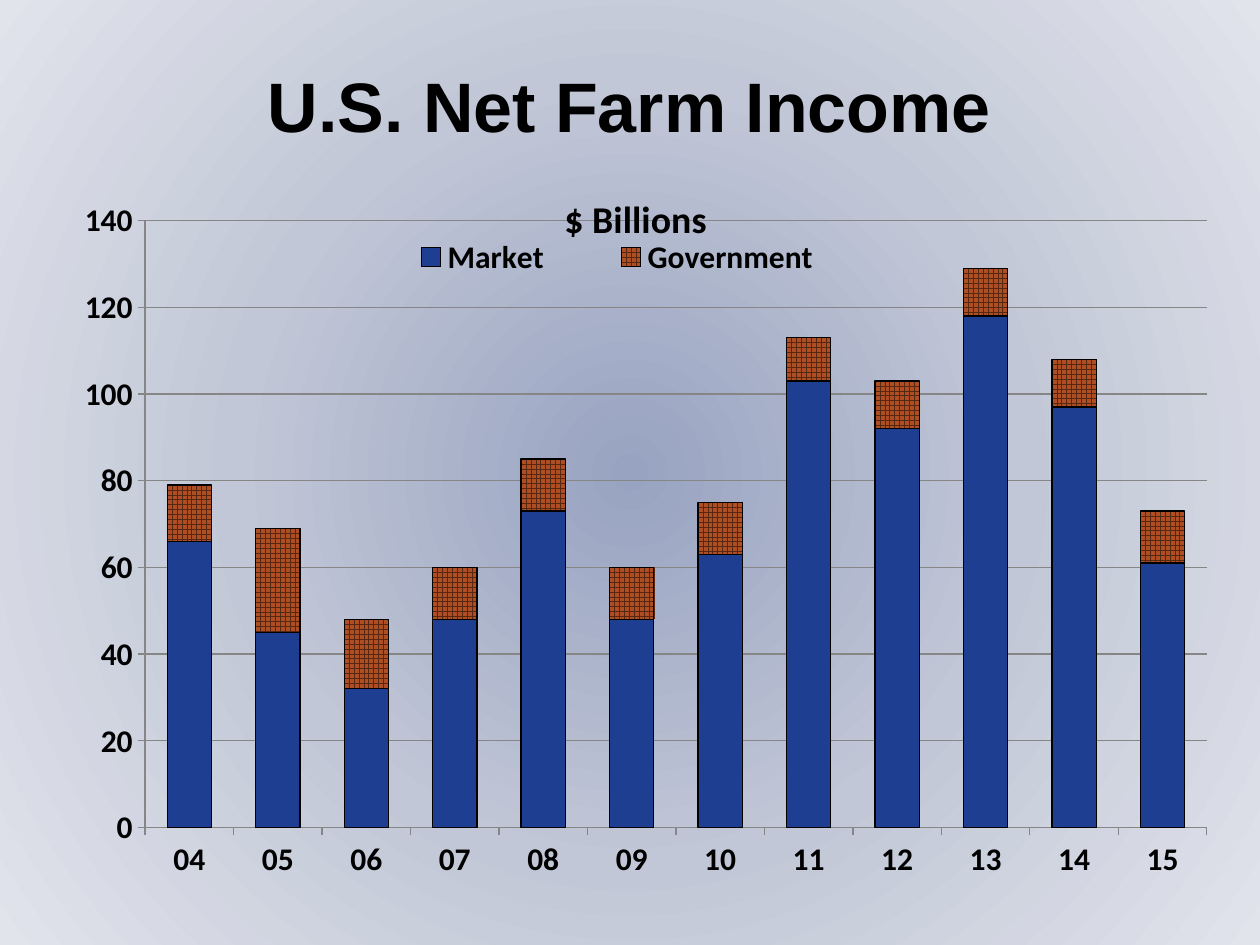
from lxml import etree
from pptx import Presentation
from pptx import util as u
from pptx.chart.data import CategoryChartData
from pptx.dml.color import RGBColor
from pptx.enum import chart as ch, dml, text
from pptx.oxml import parse_xml
from pptx.oxml.ns import nsdecls, qn

YEARS = ["04", "05", "06", "07", "08", "09", "10", "11", "12", "13", "14", "15"]
INCOME = {
    "Market": [66, 45, 32, 48, 73, 48, 63, 103, 92, 118, 97, 61],
    "Government": [13, 24, 16, 12, 12, 12, 12, 10, 11, 11, 11, 12],
}
BLACK, GRID, BLUE, RUST, BROWN = "000000", "868686", "1E3E92", "AE4E22", "572711"


def rgb(color):
    return RGBColor.from_string(color)


def place(part, index, x, y, w=None, h=None, inner=False):
    """Give a chart part a fixed layout, in shares of the chart's size."""
    for old in part.findall(qn("c:layout")):
        part.remove(old)
    layout = etree.Element(qn("c:layout"))
    manual = etree.SubElement(layout, qn("c:manualLayout"))
    settings = [("layoutTarget", "inner" if inner else None), ("xMode", "edge"),
                ("yMode", "edge"), ("x", x), ("y", y), ("w", w), ("h", h)]
    for tag, value in settings:
        if value is not None:
            etree.SubElement(manual, qn(f"c:{tag}")).set("val", str(value))
    part.insert(index, layout)


class Deck:
    """Holds the style and the current slide; boxes are shares of its size."""

    def __init__(self, width, height):
        self.prs = Presentation()
        self.prs.slide_width, self.prs.slide_height = u.Inches(width), u.Inches(height)
        self.slide = self.prs.slides.add_slide(self.prs.slide_layouts[6])
        self.heading_font, self.chart_font = "Arial", "Calibri"

    def box(self, x, y, w, h):
        across, down = self.prs.slide_width, self.prs.slide_height
        return int(x * across), int(y * down), int(w * across), int(h * down)

    def background(self, stops):
        """Fill the slide with a circular gradient that starts at its centre."""
        fill = self.slide.background.fill
        fill.gradient()
        gradient = self.slide.background._cSld.bg.bgPr.find(qn("a:gradFill"))
        colors = "".join(f'<a:gs pos="{share * 1000}"><a:srgbClr val="{color}"/></a:gs>'
                         for share, color in stops)
        circle = parse_xml(
            f'<a:gradFill {nsdecls("a")} rotWithShape="1"><a:gsLst>{colors}</a:gsLst>'
            '<a:path path="circle"><a:fillToRect l="50000" t="50000" r="50000" b="50000"/>'
            '</a:path></a:gradFill>')
        gradient.getparent().replace(gradient, circle)

    def style(self, font, name, size):
        font.name, font.size, font.bold = name, u.Pt(size), True
        font.color.rgb = rgb(BLACK)

    def heading(self, words, box):
        frame = self.slide.shapes.add_textbox(*self.box(*box)).text_frame
        frame.word_wrap = True
        frame.vertical_anchor = text.MSO_ANCHOR.MIDDLE
        frame.text = words
        line = frame.paragraphs[0]
        line.alignment = text.PP_ALIGN.CENTER
        self.style(line.runs[0].font, self.heading_font, 40)

    def stacked_columns(self, title, categories, columns, box):
        data = CategoryChartData()
        data.categories = categories
        for name, values in columns.items():
            data.add_series(name, values)
        chart = self.slide.shapes.add_chart(
            ch.XL_CHART_TYPE.COLUMN_STACKED, *self.box(*box), data).chart
        self.style(chart.font, self.chart_font, 18)
        place(chart._chartSpace.chart.plotArea, 0, 0.095, 0.097, 0.888, 0.804, inner=True)

        chart.has_title = True
        chart.chart_title.text_frame.text = title
        self.style(chart.chart_title.text_frame.paragraphs[0].runs[0].font,
                   self.chart_font, 21.6)
        place(chart.chart_title._element, 1, 0.44, 0.05)

        chart.has_legend = True
        chart.legend.position = ch.XL_LEGEND_POSITION.TOP
        chart.legend.include_in_layout = False
        place(chart.legend._element, 1, 0.27, 0.12, 0.44, 0.05)

        self.axes(chart)
        plot = chart.plots[0]
        plot.gap_width, plot.overlap, plot.vary_by_categories = 100, 100, False
        for series in plot.series:
            series.format.line.color.rgb = rgb(BLACK)
            series.format.line.width = u.Pt(0.75)
        market, government = (series.format.fill for series in plot.series)
        market.solid()
        market.fore_color.rgb = rgb(BLUE)
        government.patterned()
        government.pattern = dml.MSO_PATTERN.LARGE_GRID
        government.fore_color.rgb, government.back_color.rgb = rgb(BROWN), rgb(RUST)

    def axes(self, chart):
        years, dollars = chart.category_axis, chart.value_axis
        years.tick_label_position = ch.XL_TICK_LABEL_POSITION.LOW
        dollars.minimum_scale, dollars.maximum_scale, dollars.major_unit = 0, 140, 20
        dollars.has_major_gridlines = True
        for axis in (years, dollars):
            axis.major_tick_mark = ch.XL_TICK_MARK.OUTSIDE
            axis.minor_tick_mark = ch.XL_TICK_MARK.NONE
        for part in (years, dollars, dollars.major_gridlines):
            part.format.line.color.rgb = rgb(GRID)
            part.format.line.width = u.Pt(0.75)


def main():
    deck = Deck(10, 7.5)
    deck.background([(0, "98A3C1"), (50, "C2C7D7"), (100, "E1E4EB")])
    deck.heading("U.S. Net Farm Income", (0.025, 0.044, 0.949, 0.133))
    deck.stacked_columns("$ Billions", YEARS, INCOME, (0.025, 0.156, 0.949, 0.799))
    deck.prs.save("out.pptx")


if __name__ == "__main__":
    main()
